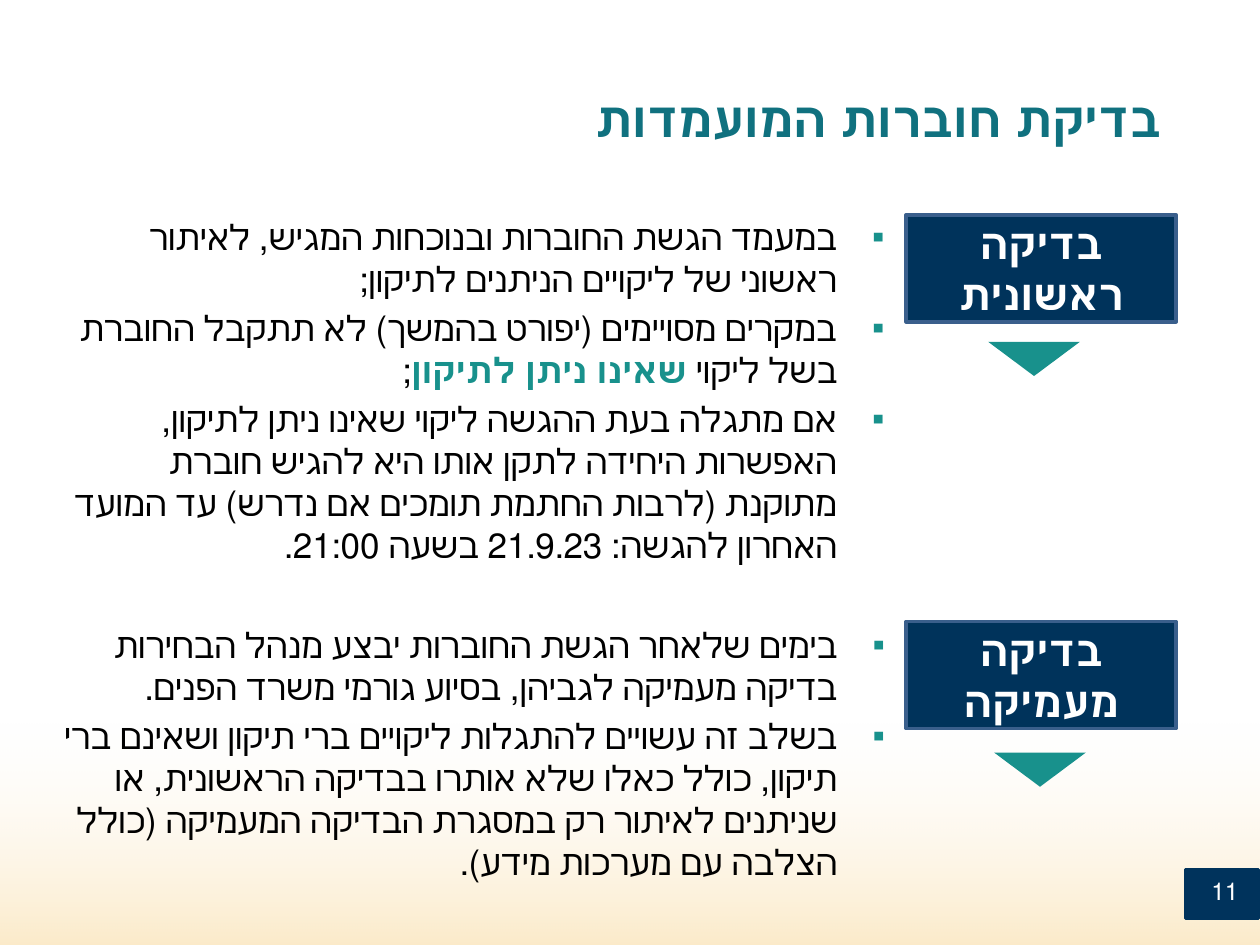
"""Build the slide about checking the candidacy booklets."""
from dataclasses import dataclass

import pptx
import pptx.dml.color
import pptx.enum.shapes
import pptx.enum.text
import pptx.oxml.ns
import pptx.util
from lxml import etree

Cm = pptx.util.Cm
Pt = pptx.util.Pt
Align = pptx.enum.text.PP_ALIGN
Anchor = pptx.enum.text.MSO_ANCHOR
Preset = pptx.enum.shapes.MSO_SHAPE
qn = pptx.oxml.ns.qn

FONT = "Calibri"
NAVY, TEAL, BLACK, WHITE = "00335B", "18918C", "000000", "FFFFFF"
INDENT = Cm(0.95)


@dataclass
class Frame:
    left: float
    top: float
    width: float
    height: float

    def lengths(self) -> list:
        return [Cm(value) for value in (self.left, self.top, self.width, self.height)]


@dataclass
class Stage:
    label: str
    label_frame: Frame
    arrow_frame: Frame
    body_frame: Frame
    bullets: list


STAGES = [
    Stage(
        "בדיקה ראשונית",
        Frame(18.27, 4.33, 5.44, 2.16),
        Frame(19.92, 6.89, 1.85, 0.69),
        Frame(1.09, 4.22, 16.99, 8.86),
        [
            ["במעמד הגשת החוברות ובנוכחות המגיש, לאיתור ראשוני של ליקויים הניתנים לתיקון;"],
            ["במקרים מסויימים (יפורט בהמשך) לא תתקבל החוברת בשל ליקוי ",
             "שאינו ניתן לתיקון", ";"],
            ["אם מתגלה בעת ההגשה ליקוי שאינו ניתן לתיקון, האפשרות היחידה לתקן אותו היא "
             "להגיש חוברת מתוקנת (לרבות החתמת תומכים אם נדרש) עד המועד האחרון להגשה: "
             "21.9.23 בשעה 21:00."],
        ],
    ),
    Stage(
        "בדיקה מעמיקה",
        Frame(18.27, 12.53, 5.44, 2.16),
        Frame(20.04, 15.17, 1.85, 0.69),
        Frame(0.89, 12.45, 17.2, 9.91),
        [
            ["בימים שלאחר הגשת החוברות יבצע מנהל הבחירות בדיקה מעמיקה לגביהן, "
             "בסיוע גורמי משרד הפנים."],
            ["בשלב זה עשויים להתגלות ליקויים ברי תיקון ושאינם ברי תיקון, כולל כאלו שלא "
             "אותרו בבדיקה הראשונית, או שניתנים לאיתור רק במסגרת הבדיקה המעמיקה "
             "(כולל הצלבה עם מערכות מידע)."],
        ],
    ),
]


def color(value: str) -> pptx.dml.color.RGBColor:
    return pptx.dml.color.RGBColor.from_string(value)


def add_span(para, text: str, *, size: float, ink: str, bold: bool = False) -> None:
    span = para.add_run()
    span.text = text
    span.font.size = Pt(size)
    span.font.bold = bold
    span.font.name = FONT
    span.font.color.rgb = color(ink)


def set_right_to_left(para, align) -> None:
    para.alignment = align
    para._p.get_or_add_pPr().set("rtl", "1")


def write(box, text: str, *, size: float, ink: str, bold: bool = False,
          align=Align.RIGHT, anchor=Anchor.TOP) -> None:
    box.text_frame.word_wrap = True
    box.text_frame.vertical_anchor = anchor
    para = box.text_frame.paragraphs[0]
    set_right_to_left(para, align)
    add_span(para, text, size=size, ink=ink, bold=bold)


def add_block(page, preset, frame: Frame, fill: str, line: str = ""):
    block = page.shapes.add_shape(preset, *frame.lengths())
    block.shadow.inherit = False
    block.fill.solid()
    block.fill.fore_color.rgb = color(fill)
    if line:
        block.line.color.rgb = color(line)
        block.line.width = Pt(2)
    else:
        block.line.fill.background()
    return block


def set_opacity(block, *opacities: float) -> None:
    tints = block._element.spPr.iter(qn("a:srgbClr"))
    for tint, opacity in zip(tints, opacities):
        etree.SubElement(tint, qn("a:alpha")).set("val", str(opacity * 1000))


def add_backdrop(page) -> None:
    panel = add_block(page, Preset.ROUNDED_RECTANGLE, Frame(0.89, -0.69, 22.81, 20.6), WHITE)
    panel.adjustments[0] = 0.04
    set_opacity(panel, 27)
    glow = add_block(page, Preset.RECTANGLE, Frame(0, 14.53, 25.4, 4.52), WHITE)
    glow.fill.gradient()
    glow.fill.gradient_angle = 270
    for stop, shade in zip(glow.fill.gradient_stops, ("FCECD1", "F3B946")):
        stop.color.rgb = color(shade)
    set_opacity(glow, 0, 29)


def add_bullet(para) -> None:
    properties = para._p.get_or_add_pPr()
    properties.set("marL", str(INDENT))
    properties.set("indent", str(-INDENT))
    bullet_color = etree.SubElement(properties, qn("a:buClr"))
    etree.SubElement(bullet_color, qn("a:srgbClr")).set("val", TEAL)
    etree.SubElement(properties, qn("a:buFont")).set("typeface", "Arial")
    etree.SubElement(properties, qn("a:buChar")).set("char", "▪")


def add_stage(page, stage: Stage) -> None:
    label = add_block(page, Preset.RECTANGLE, stage.label_frame, NAVY, "3A5F8C")
    write(label, stage.label, size=24, ink=WHITE, bold=True,
          align=Align.CENTER, anchor=Anchor.MIDDLE)
    arrow = add_block(page, Preset.ISOSCELES_TRIANGLE, stage.arrow_frame, TEAL)
    arrow.rotation = 180
    body = page.shapes.add_textbox(*stage.body_frame.lengths()).text_frame
    body.word_wrap = True
    for index, pieces in enumerate(stage.bullets):
        para = body.add_paragraph() if index else body.paragraphs[0]
        set_right_to_left(para, Align.RIGHT)
        para.space_before = Pt(4 if index else 0)
        add_bullet(para)
        for position, piece in enumerate(pieces):
            stressed = position == 1
            add_span(para, piece, size=20, ink=TEAL if stressed else BLACK, bold=stressed)


def main() -> None:
    deck = pptx.Presentation()
    deck.slide_width, deck.slide_height = Cm(25.4), Cm(19.05)
    page = deck.slides.add_slide(deck.slide_layouts[6])
    add_backdrop(page)
    add_block(page, Preset.RECTANGLE, Frame(23.9, 17.53, 1.47, 0.99), "00335C", "00335C")
    number = page.shapes.add_textbox(*Frame(23.9, 17.53, 1.32, 0.79).lengths())
    write(number, "11", size=14, ink=WHITE)
    title = page.shapes.add_textbox(*Frame(5.94, 0.53, 17.73, 3.68).lengths())
    write(title, "בדיקת חוברות המועמדות", size=28, ink="10717F", bold=True,
          anchor=Anchor.MIDDLE)
    for stage in STAGES:
        add_stage(page, stage)
    deck.save("out.pptx")


if __name__ == "__main__":
    main()
